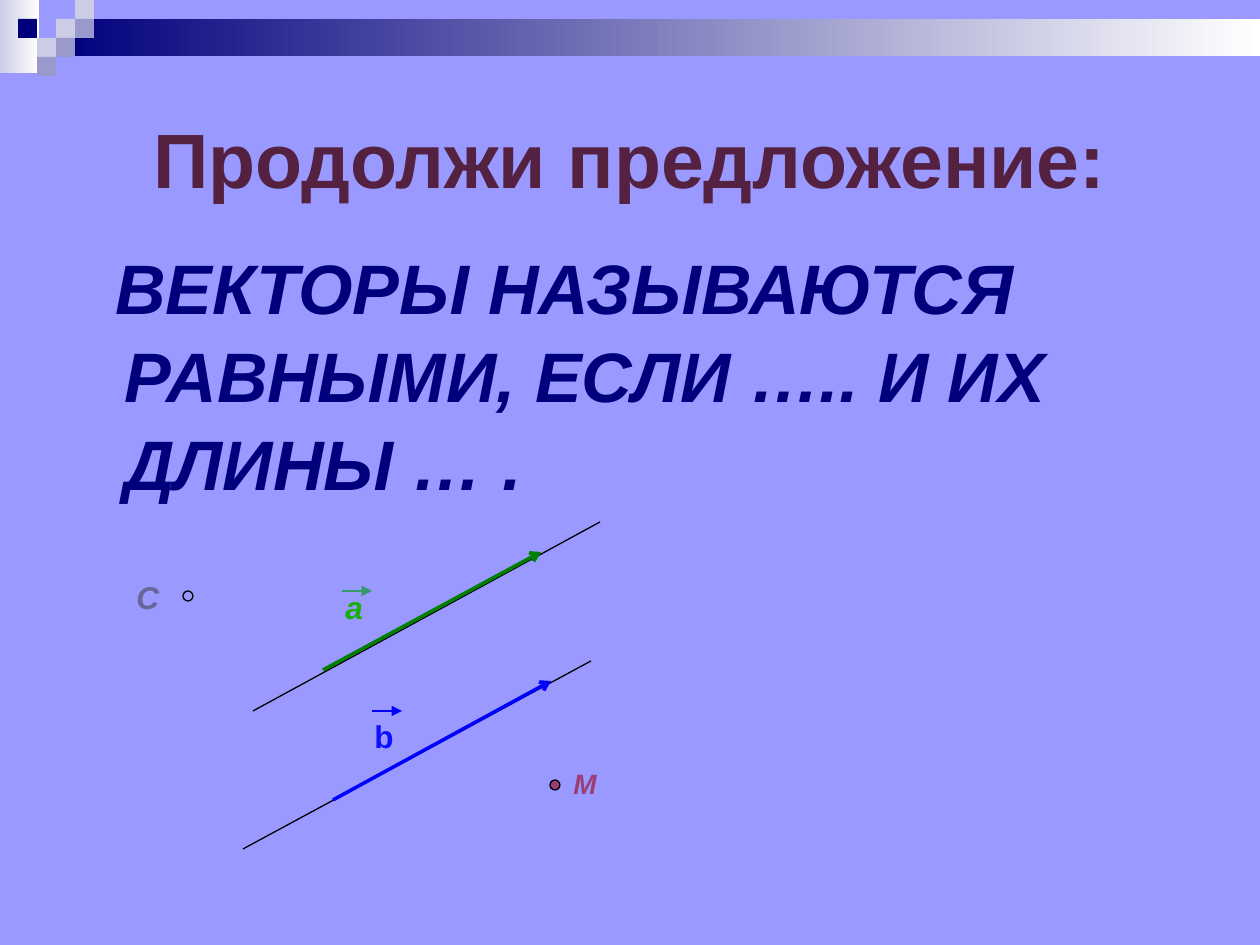
from lxml import etree
from pptx import Presentation
from pptx import util as u
from pptx.dml.color import RGBColor
from pptx.enum import shapes, text
from pptx.oxml.ns import qn

PX = 914400 / 126

BACKGROUND = RGBColor(0x99, 0x99, 0xFF)
NAVY = RGBColor(0x00, 0x00, 0x7D)
PALE = RGBColor(0xCC, 0xCC, 0xE6)
GREY_BLUE = RGBColor(0x99, 0x99, 0xCC)
WHITE = RGBColor(0xFF, 0xFF, 0xFF)
BLACK = RGBColor(0x00, 0x00, 0x00)
MAROON = RGBColor(0x54, 0x22, 0x40)
GREEN = RGBColor(0x00, 0x80, 0x00)
BLUE = RGBColor(0x00, 0x00, 0xFF)
SEA_GREEN = RGBColor(0x33, 0x99, 0x66)
LABEL_GREEN = RGBColor(0x19, 0xAE, 0x0E)
LABEL_BLUE = RGBColor(0x0F, 0x0F, 0xFF)
PLUM = RGBColor(0x99, 0x3F, 0x75)
SLATE = RGBColor(0x66, 0x66, 0x99)

SQUARE = 19


def px(*lengths):
    return [u.Emu(round(length * PX)) for length in lengths]


def write(shape, content, *, size, color, bold=True, italic=False,
          align=text.PP_ALIGN.LEFT, anchor=text.MSO_ANCHOR.TOP):
    """Fill a shape with one formatted paragraph and return it."""
    frame = shape.text_frame
    frame.word_wrap = True
    frame.vertical_anchor = anchor
    paragraph = frame.paragraphs[0]
    paragraph.alignment = align
    run = paragraph.add_run()
    run.text = content
    font = run.font
    font.name, font.size = "Arial", u.Pt(size)
    font.bold, font.italic = bold, italic
    font.color.rgb = color
    return paragraph


def add_text(slide, box, content, **style):
    return write(slide.shapes.add_textbox(*px(*box)), content, **style)


def add_filled(slide, kind, box, color, fade_to=None, outline=None):
    """Add a preset shape with a solid fill, or a left-to-right fade."""
    shape = slide.shapes.add_shape(kind, *px(*box))
    shape.shadow.inherit = False
    if fade_to is None:
        shape.fill.solid()
        shape.fill.fore_color.rgb = color
    else:
        shape.fill.gradient()
        shape.fill.gradient_angle = 0
        for stop, stop_color, position in zip(
                shape.fill.gradient_stops, (color, fade_to), (0, 1)):
            stop.color.rgb = stop_color
            stop.position = position
    if outline is None:
        shape.line.fill.background()
    else:
        shape.line.color.rgb = outline
        shape.line.width = u.Pt(0.75)


def add_line(slide, ends, color, width, head=None):
    line = slide.shapes.add_connector(shapes.MSO_CONNECTOR.STRAIGHT, *px(*ends))
    line.line.color.rgb = color
    line.line.width = u.Pt(width)
    if head:
        etree.SubElement(line.line._get_or_add_ln(), qn("a:tailEnd"), type=head)
    etree.SubElement(line._element.spPr, qn("a:effectLst"))


def add_banner(slide):
    rectangle = shapes.MSO_SHAPE.RECTANGLE
    add_filled(slide, rectangle, (0, 0, 39, 73), PALE, fade_to=WHITE)
    add_filled(slide, rectangle, (57, 19, 1203, 37), NAVY, fade_to=WHITE)
    squares = [(3, 1, PALE), (4, 0, PALE), (4, 1, GREY_BLUE), (2, 2, PALE),
               (1, 1, NAVY), (3, 2, GREY_BLUE), (2, 3, GREY_BLUE)]
    for column, row, color in squares:
        box = (column * SQUARE - 1, row * SQUARE, SQUARE, SQUARE)
        add_filled(slide, rectangle, box, color)


def add_title(slide, content):
    title = slide.shapes.title
    title.left, title.top, title.width, title.height = px(63, 63, 1134, 189)
    write(title, content, size=44, color=MAROON,
          align=text.PP_ALIGN.CENTER, anchor=text.MSO_ANCHOR.MIDDLE)


def add_sentence(slide, content):
    paragraph = add_text(slide, (64, 234, 1134, 257), content,
                         size=40, color=NAVY, italic=True)
    paragraph.line_spacing = 1.05
    margin, indent = px(48, -9)
    properties = paragraph._p.get_or_add_pPr()
    properties.set("marL", str(margin))
    properties.set("indent", str(indent))


def add_vectors(slide):
    for ends in [(253, 711, 600, 522), (243, 849, 591, 661)]:
        add_line(slide, ends, BLACK, 0.75)
    add_line(slide, (323, 670, 541, 552), GREEN, 2, head="arrow")
    add_line(slide, (333, 800, 551, 681), BLUE, 2, head="arrow")
    add_text(slide, (333, 582, 59, 50), "a",
             size=18, color=LABEL_GREEN, italic=True)
    add_text(slide, (362, 711, 59, 50), "b", size=18, color=LABEL_BLUE)
    add_line(slide, (342, 591, 372, 591), SEA_GREEN, 1.25, head="triangle")
    add_line(slide, (372, 711, 402, 711), BLUE, 1.25, head="triangle")


def add_points(slide):
    oval = shapes.MSO_SHAPE.OVAL
    add_filled(slide, oval, (183, 591, 10, 10), BACKGROUND, outline=BLACK)
    add_filled(slide, oval, (550, 780, 10, 10), PLUM, outline=BLACK)
    add_text(slide, (561, 760, 69, 47), "M", size=16, color=PLUM, italic=True)
    add_text(slide, (124, 572, 49, 50), "C", size=18, color=SLATE, italic=True)


def main():
    presentation = Presentation()
    presentation.slide_width, presentation.slide_height = px(1260, 945)
    slide = presentation.slides.add_slide(presentation.slide_layouts[5])
    slide.background.fill.solid()
    slide.background.fill.fore_color.rgb = BACKGROUND
    add_banner(slide)
    add_title(slide, "Продолжи предложение:")
    add_vectors(slide)
    add_points(slide)
    add_sentence(slide, "ВЕКТОРЫ НАЗЫВАЮТСЯ РАВНЫМИ, ЕСЛИ ….. И ИХ ДЛИНЫ … .")
    presentation.save("out.pptx")


if __name__ == "__main__":
    main()
